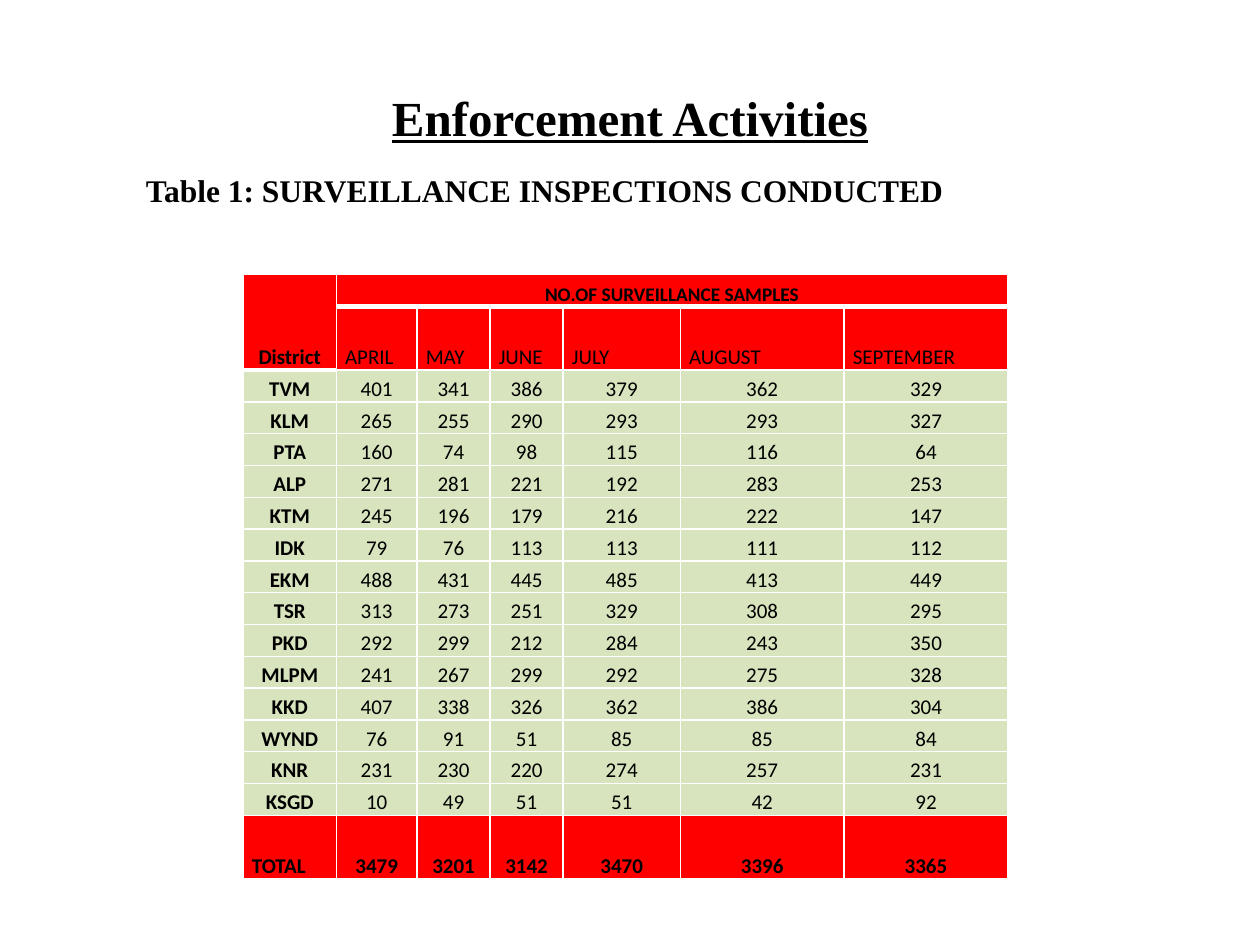
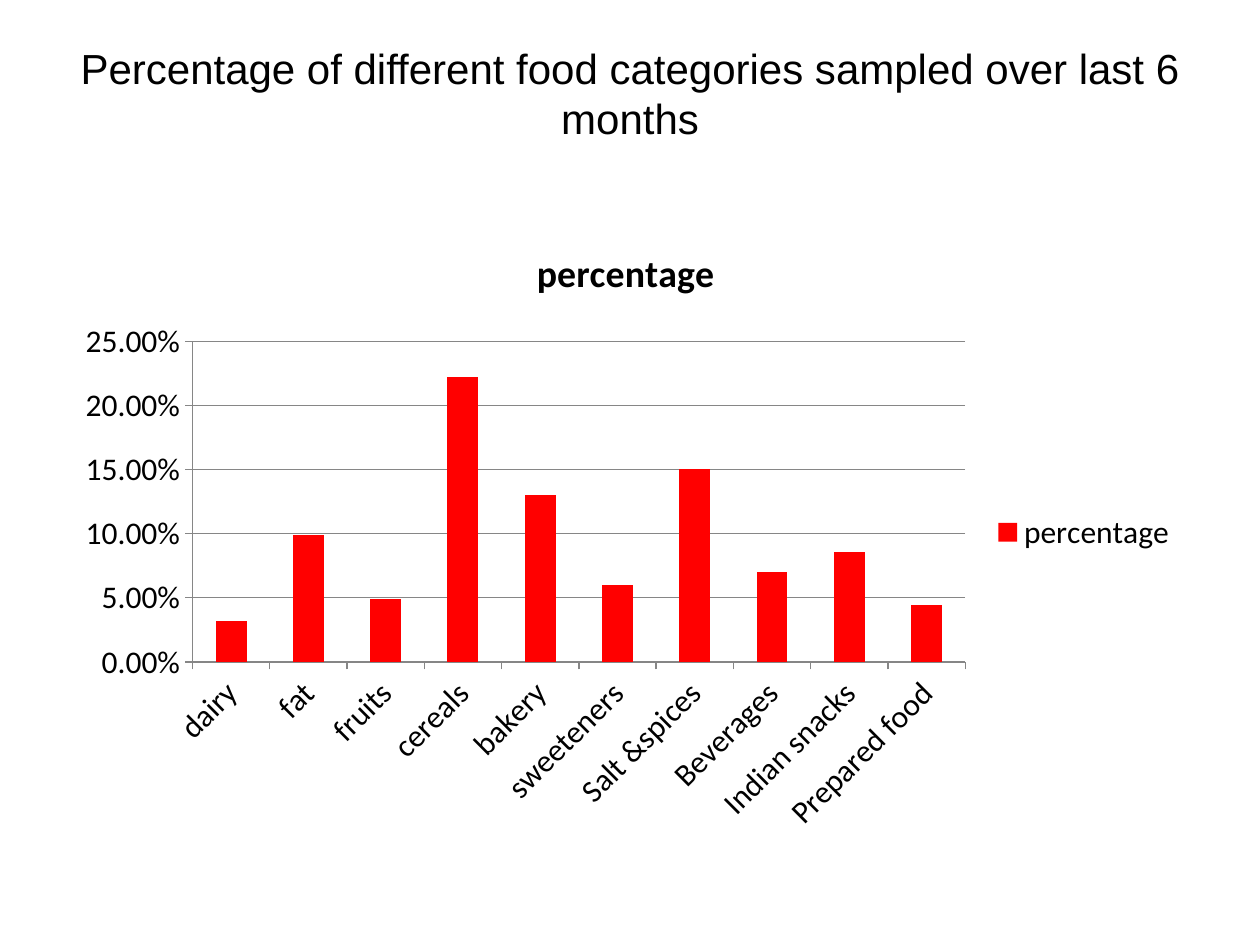
from lxml import etree
from pptx import Presentation
from pptx.chart.data import CategoryChartData
from pptx.dml.color import RGBColor
from pptx.enum import chart as ch, text as tx
from pptx.oxml.ns import qn
from pptx.util import Inches, Pt

BLACK = RGBColor(0x00, 0x00, 0x00)
RED = RGBColor(0xFF, 0x00, 0x00)
GREEN = RGBColor(0xD7, 0xE4, 0xBD)
WHITE = RGBColor(0xFF, 0xFF, 0xFF)
GREY = RGBColor(0x86, 0x86, 0x86)
SERIF, SANS, BODY = "Times New Roman", "Arial", "Calibri"
CENTER, LEFT = tx.PP_ALIGN.CENTER, tx.PP_ALIGN.LEFT

ENFORCEMENT_TITLE = "Enforcement Activities"
TABLE_CAPTION = "Table 1: SURVEILLANCE INSPECTIONS CONDUCTED"
SAMPLES_HEADING = "NO.OF SURVEILLANCE SAMPLES"
MONTHS = ["APRIL", "MAY", "JUNE", "JULY", "AUGUST", "SEPTEMBER"]
DISTRICTS = [
    ("TVM", 401, 341, 386, 379, 362, 329),
    ("KLM", 265, 255, 290, 293, 293, 327),
    ("PTA", 160, 74, 98, 115, 116, 64),
    ("ALP", 271, 281, 221, 192, 283, 253),
    ("KTM", 245, 196, 179, 216, 222, 147),
    ("IDK", 79, 76, 113, 113, 111, 112),
    ("EKM", 488, 431, 445, 485, 413, 449),
    ("TSR", 313, 273, 251, 329, 308, 295),
    ("PKD", 292, 299, 212, 284, 243, 350),
    ("MLPM", 241, 267, 299, 292, 275, 328),
    ("KKD", 407, 338, 326, 362, 386, 304),
    ("WYND", 76, 91, 51, 85, 85, 84),
    ("KNR", 231, 230, 220, 274, 257, 231),
    ("KSGD", 10, 49, 51, 51, 42, 92),
]
TOTALS = ("TOTAL", 3479, 3201, 3142, 3470, 3396, 3365)
COLUMN_WIDTHS = [0.74, 0.64, 0.58, 0.58, 0.93, 1.3, 1.3]

FOOD_TITLE = "Percentage of different food categories sampled over last 6 months"
SERIES_NAME = "percentage "
FOOD_SHARES = {
    "dairy": 0.032, "fat": 0.099, "fruits": 0.049, "cereals": 0.222,
    "bakery": 0.13, "sweeteners": 0.06, "Salt &spices": 0.15,
    "Beverages": 0.07, "Indian snacks": 0.086, "Prepared food": 0.044,
}


def style(font, size, name, bold=False, underline=False):
    font.size, font.name, font.bold, font.underline = Pt(size), name, bold, underline
    font.color.rgb = BLACK


def add_titled_slide(prs, title, size, font, bottom=0.05, **look):
    slide = prs.slides.add_slide(prs.slide_layouts[5])
    sp = slide.shapes.title
    sp.left, sp.top, sp.width, sp.height = map(Inches, (0.5, 0.3, 9, 1.25))
    tf = sp.text_frame
    tf.text = title
    tf.word_wrap = True
    tf.auto_size = tx.MSO_AUTO_SIZE.NONE
    tf.vertical_anchor = tx.MSO_ANCHOR.MIDDLE
    tf.margin_bottom = Inches(bottom)
    p = tf.paragraphs[0]
    p.alignment = CENTER
    style(p.runs[0].font, size, font, **look)
    return slide


def set_borders(cell, **widths):
    tc_pr = cell._tc.get_or_add_tcPr()
    for side in "LRTB":
        ln = etree.SubElement(tc_pr, qn(f"a:ln{side}"), w=str(Pt(widths.get(side, 1))))
        fill = etree.SubElement(ln, qn("a:solidFill"))
        etree.SubElement(fill, qn("a:srgbClr"), val=str(WHITE))


def format_cell(cell, value, fill, size=12, bold=False, align=CENTER, **borders):
    set_borders(cell, **borders)
    cell.fill.solid()
    cell.fill.fore_color.rgb = fill
    cell.margin_left = cell.margin_right = Inches(0.07)
    cell.margin_top = cell.margin_bottom = 0
    cell.vertical_anchor = tx.MSO_ANCHOR.BOTTOM
    p = cell.text_frame.paragraphs[0]
    p.text = str(value)
    p.alignment, p.line_spacing = align, 1.15
    style(p.runs[0].font if p.runs else p.font, size, BODY, bold)


def add_inspection_table(slide):
    rows = [("District", SAMPLES_HEADING, *[""] * 5), ("", *MONTHS), *DISTRICTS, TOTALS]
    last = len(rows) - 1
    units = [2 if r in (1, last) else 1 for r in range(len(rows))]
    height = Inches(4.8)
    table = slide.shapes.add_table(len(rows), len(COLUMN_WIDTHS), Inches(1.93), Inches(2.18),
                                   Inches(sum(COLUMN_WIDTHS)), height).table
    table.first_row = table.horz_banding = False
    for column, width in zip(table.columns, COLUMN_WIDTHS):
        column.width = Inches(width)
    for row, unit in zip(table.rows, units):
        row.height = height * unit // sum(units)
    for r, values in enumerate(rows):
        for c, value in enumerate(values):
            left = (r == 1 and c > 0) or (r == last and c == 0)
            format_cell(
                table.cell(r, c), value,
                fill=RED if r in (0, 1, last) else GREEN,
                size=11 if r == 0 and c > 0 else 12,
                bold=r in (0, last) or c == 0,
                align=LEFT if left else CENTER,
                T=3 if r == 1 and c > 0 else 1,
                B=3 if r == 0 or (r, c) == (1, 0) else 1)
    table.cell(0, 0).merge(table.cell(1, 0))
    table.cell(0, 1).merge(table.cell(0, len(MONTHS)))


def add_caption(slide):
    tf = slide.shapes.add_textbox(*map(Inches, (1.06, 1.31, 8.98, 0.4))).text_frame
    tf.text = TABLE_CAPTION
    tf.word_wrap = True
    tf.auto_size = tx.MSO_AUTO_SIZE.SHAPE_TO_FIT_TEXT
    style(tf.paragraphs[0].runs[0].font, 18, SERIF, bold=True)


def add_food_chart(slide):
    data = CategoryChartData(number_format="0.00%")
    data.categories = list(FOOD_SHARES)
    data.add_series(SERIES_NAME, list(FOOD_SHARES.values()))
    chart = slide.shapes.add_chart(ch.XL_CHART_TYPE.COLUMN_CLUSTERED,
                                   *map(Inches, (0.5, 1.75, 9, 4.95)), data).chart
    style(chart.font, 18, BODY)
    chart.has_title = True
    tf = chart.chart_title.text_frame
    tf.text = SERIES_NAME
    style(tf.paragraphs[0].runs[0].font, 21.6, BODY, bold=True)
    chart.has_legend = True
    chart.legend.position = ch.XL_LEGEND_POSITION.RIGHT
    chart.legend.include_in_layout = False
    plot = chart.plots[0]
    plot.gap_width, plot.vary_by_categories = 150, False
    bars = plot.series[0].format.fill
    bars.solid()
    bars.fore_color.rgb = RED
    values = chart.value_axis
    values.minimum_scale, values.maximum_scale, values.major_unit = 0, 0.25, 0.05
    values.tick_labels.number_format = "0.00%"
    values.tick_labels.number_format_is_linked = False
    for axis in (chart.category_axis, values):
        axis.major_tick_mark = ch.XL_TICK_MARK.OUTSIDE
    for part in (chart.category_axis, values, values.major_gridlines):
        part.format.line.color.rgb = GREY
        part.format.line.width = Pt(0.75)


def main():
    prs = Presentation()
    prs.slide_width, prs.slide_height = Inches(10), Inches(7.5)
    enforcement = add_titled_slide(prs, ENFORCEMENT_TITLE, 28, SERIF, bold=True, underline=True)
    add_inspection_table(enforcement)
    add_caption(enforcement)
    add_food_chart(add_titled_slide(prs, FOOD_TITLE, 24, SANS, bottom=0.43))
    prs.save("out.pptx")


if __name__ == "__main__":
    main()
